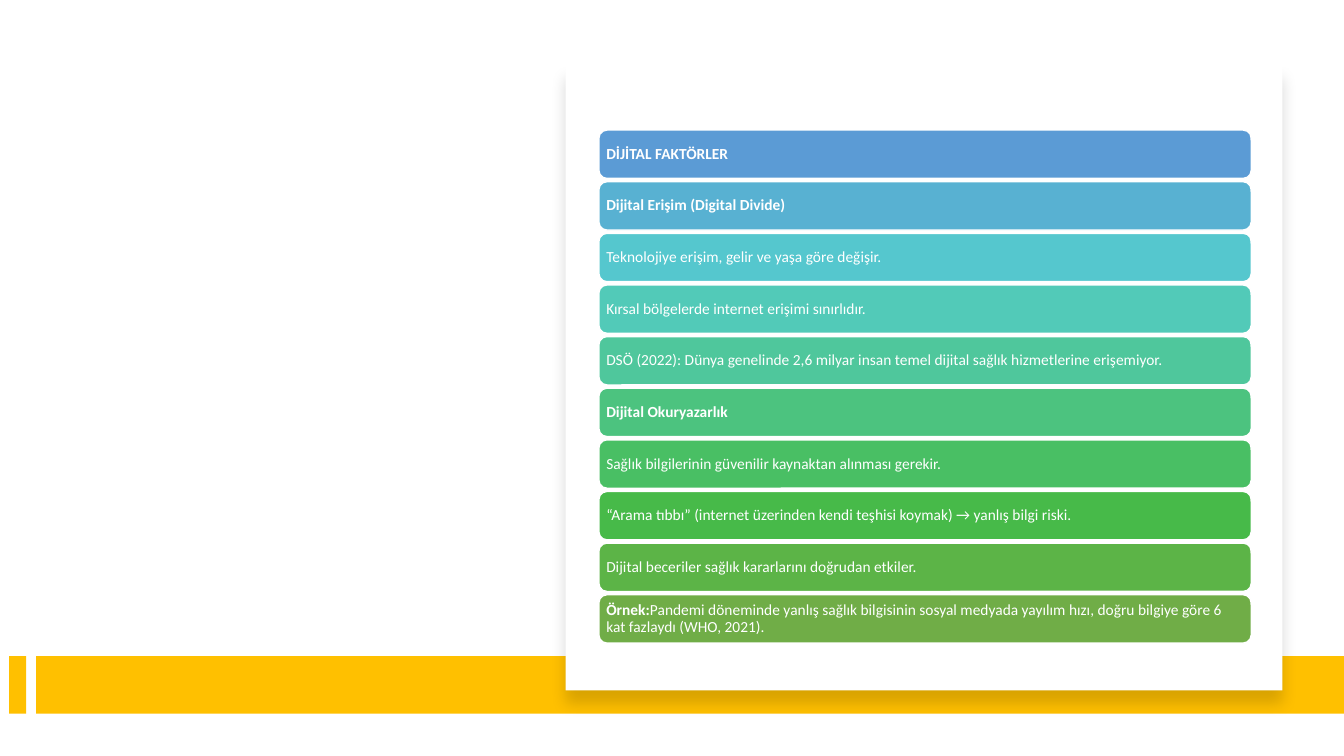
from dataclasses import dataclass

from lxml import etree
from pptx import Presentation
from pptx import util as u
from pptx.dml import color
from pptx.enum import shapes, text
from pptx.oxml import ns

PX = 9144  # 100 px to the inch


@dataclass(frozen=True)
class Theme:
    font: str = "Calibri"
    size: int = 11
    white: str = "FFFFFF"
    band: str = "FFC000"
    shadow: str = "000000"
    bars: tuple = ("5B9BD5", "58B1D2", "55C7CE", "52CAB8", "4FC79C",
                   "4CC37F", "49BF64", "47BA49", "5CB447", "70AD47")


THEME = Theme()

# Each bar is a list of (text, bold) runs
FACTORS = [
    [("DİJİTAL FAKTÖRLER", True)],
    [("Dijital Erişim (Digital Divide)", True)],
    [("Teknolojiye erişim, gelir ve yaşa göre değişir.", False)],
    [("Kırsal bölgelerde internet erişimi sınırlıdır.", False)],
    [("DSÖ (2022): Dünya genelinde 2,6 milyar insan temel dijital sağlık "
      "hizmetlerine erişemiyor.", False)],
    [("Dijital Okuryazarlık", True)],
    [("Sağlık bilgilerinin güvenilir kaynaktan alınması gerekir.", False)],
    [("“Arama tıbbı” (internet üzerinden kendi teşhisi koymak) → yanlış "
      "bilgi riski.", False)],
    [("Dijital beceriler sağlık kararlarını doğrudan etkiler.", False)],
    [("Örnek:", True),
     ("Pandemi döneminde yanlış sağlık bilgisinin sosyal medyada yayılım "
      "hızı, doğru bilgiye göre 6 kat fazlaydı (WHO, 2021).", False)],
]


def add_block(page, kind, box, fill):
    """Add a flat, borderless shape in a px box."""
    block = page.shapes.add_shape(kind, *(round(side * PX) for side in box))
    block.shadow.inherit = False
    block.fill.solid()
    block.fill.fore_color.rgb = color.RGBColor.from_string(fill)
    block.line.fill.background()
    return block


def add_soft_shadow(block):
    effects = block._element.spPr.find(ns.qn("a:effectLst"))
    shadow = etree.SubElement(
        effects, ns.qn("a:outerShdw"), blurRad=str(u.Pt(11)),
        dist=str(u.Pt(10)), dir="5400000", algn="t", rotWithShape="0")
    tint = etree.SubElement(shadow, ns.qn("a:srgbClr"), val=THEME.shadow)
    etree.SubElement(tint, ns.qn("a:alpha"), val="15000")


def write_runs(bar, runs):
    frame = bar.text_frame
    frame.word_wrap = True
    frame.vertical_anchor = text.MSO_ANCHOR.MIDDLE
    frame.margin_left = frame.margin_right = 5 * PX
    frame.margin_top = frame.margin_bottom = 5 * PX
    para = frame.paragraphs[0]
    para.alignment = text.PP_ALIGN.LEFT
    para.line_spacing = 0.9
    for words, bold in runs:
        span = para.add_run()
        span.text = words
        span.font.name = THEME.font
        span.font.size = u.Pt(THEME.size)
        span.font.bold = bold
        span.font.color.rgb = color.RGBColor.from_string(THEME.white)


def draw_band(page, box):
    """Yellow footer band: a short tab, a gap, then the long strip."""
    left, top, width, height = box
    tab, gap = 17, 10
    rect = shapes.MSO_SHAPE.RECTANGLE
    add_block(page, rect, (left, top, tab, height), THEME.band)
    add_block(page, rect, (left + tab + gap, top, width - tab - gap, height),
              THEME.band)


def draw_card(page, box):
    """White card with a shadow, holding the factor bars."""
    left, top, width, height = box
    card = add_block(page, shapes.MSO_SHAPE.RECTANGLE, box, THEME.white)
    add_soft_shadow(card)
    draw_bars(page, (left + 33, top + 65, width - 64, height - 112))


def draw_bars(page, box):
    """Equal bars spread over the height of the box."""
    left, top, width, height = box
    bar_height = 48
    pitch = (height - bar_height) / (len(FACTORS) - 1)
    for row, (runs, fill) in enumerate(zip(FACTORS, THEME.bars)):
        bar = add_block(page, shapes.MSO_SHAPE.ROUNDED_RECTANGLE,
                        (left, top + row * pitch, width, bar_height), fill)
        bar.line.color.rgb = color.RGBColor.from_string(THEME.white)
        bar.line.width = u.Pt(1)
        write_runs(bar, runs)


def main():
    deck = Presentation()
    deck.slide_width = 1333 * PX
    deck.slide_height = 750 * PX
    page = deck.slides.add_slide(deck.slide_layouts[6])
    draw_band(page, (9, 651, 1324, 57))
    draw_card(page, (561, 64, 711, 621))
    deck.save("out.pptx")


if __name__ == "__main__":
    main()
